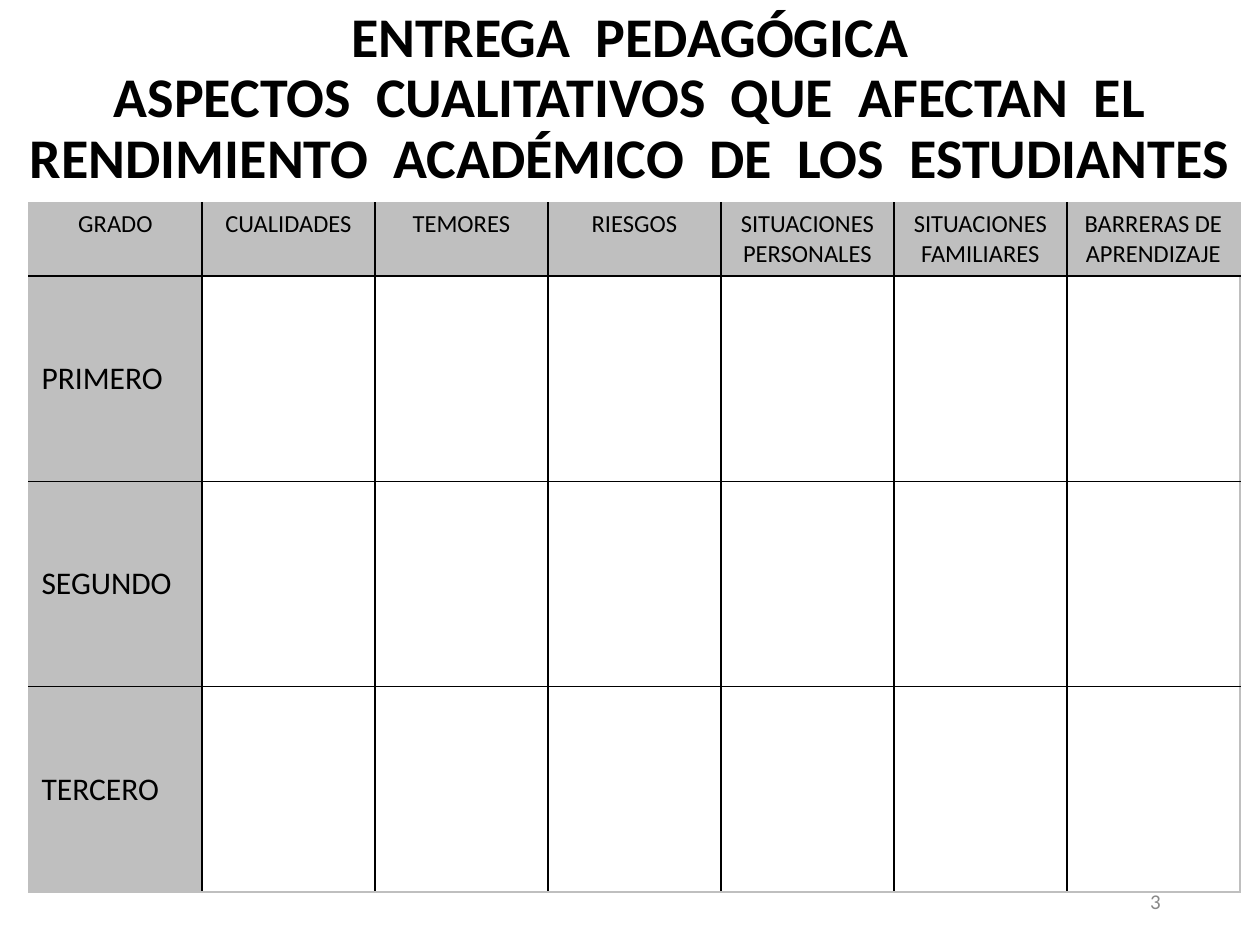
from dataclasses import dataclass

from lxml import etree
from pptx import Presentation
from pptx.dml.color import RGBColor
from pptx.enum import text as t
from pptx.oxml import ns
from pptx.util import Inches, Pt

BLACK = RGBColor(0x00, 0x00, 0x00)
WHITE = RGBColor(0xFF, 0xFF, 0xFF)
HEADING_GRAY = RGBColor(0xBF, 0xBF, 0xBF)
NUMBER_GRAY = RGBColor(0x89, 0x89, 0x89)
FONT = "Calibri"

HEADINGS = ["GRADO", "CUALIDADES", "TEMORES", "RIESGOS", "SITUACIONES PERSONALES",
            "SITUACIONES FAMILIARES", "BARRERAS DE APRENDIZAJE"]
GRADES = ["PRIMERO", "SEGUNDO", "TERCERO"]
TABLE_WIDTH = 9.61
HEADING_HEIGHT, GRADE_HEIGHT = 0.58, 1.63


@dataclass
class TextStyle:
    size: int
    color: RGBColor = BLACK
    bold: bool = False
    align: t.PP_ALIGN = t.PP_ALIGN.LEFT
    anchor: t.MSO_ANCHOR = t.MSO_ANCHOR.TOP


@dataclass
class Label:
    text: str
    left: float
    top: float
    width: float
    height: float
    style: TextStyle
    line_spacing: float = 1.0


TITLE_STYLE = TextStyle(32, bold=True, align=t.PP_ALIGN.CENTER, anchor=t.MSO_ANCHOR.BOTTOM)
NUMBER_STYLE = TextStyle(12, NUMBER_GRAY, align=t.PP_ALIGN.RIGHT, anchor=t.MSO_ANCHOR.MIDDLE)
HEADING_STYLE = TextStyle(14, align=t.PP_ALIGN.CENTER)
GRADE_STYLE = TextStyle(18, anchor=t.MSO_ANCHOR.MIDDLE)

LABELS = [
    Label("ENTREGA  PEDAGÓGICA\vASPECTOS  CUALITATIVOS  QUE  AFECTAN  EL "
          "RENDIMIENTO  ACADÉMICO  DE  LOS  ESTUDIANTES",
          0, 0, 10, 1.56, TITLE_STYLE, 0.9),
    Label("3", 7.06, 6.95, 2.25, 0.4, NUMBER_STYLE),
]


def style_paragraph(paragraph, style: TextStyle) -> None:
    paragraph.alignment = style.align
    font = paragraph.font
    font.name, font.size, font.bold = FONT, Pt(style.size), style.bold
    font.color.rgb = style.color


def add_label(slide, label: Label) -> None:
    box = slide.shapes.add_textbox(Inches(label.left), Inches(label.top),
                                   Inches(label.width), Inches(label.height))
    frame = box.text_frame
    frame.word_wrap = True
    frame.vertical_anchor = label.style.anchor
    paragraph = frame.paragraphs[0]
    paragraph.text = label.text
    paragraph.line_spacing = label.line_spacing
    style_paragraph(paragraph, label.style)


def set_borders(cell, colors: dict[str, RGBColor]) -> None:
    """Add the border lines ahead of the fill, as the schema requires."""
    properties = cell._tc.get_or_add_tcPr()
    for position, (side, color) in enumerate(colors.items()):
        line = etree.Element(ns.qn(f"a:{side}"), w=str(Pt(1)))
        fill = etree.SubElement(line, ns.qn("a:solidFill"))
        etree.SubElement(fill, ns.qn("a:srgbClr"), val=str(color))
        properties.insert(position, line)


def add_grade_table(slide) -> None:
    row_count, column_count = len(GRADES) + 1, len(HEADINGS)
    heights = [HEADING_HEIGHT] + [GRADE_HEIGHT] * len(GRADES)
    table = slide.shapes.add_table(row_count, column_count, Inches(0.23), Inches(1.61),
                                   Inches(TABLE_WIDTH), Inches(sum(heights))).table
    for column in table.columns:
        column.width = Inches(TABLE_WIDTH / column_count)
    for row, height in zip(table.rows, heights):
        row.height = Inches(height)

    # Gray headings and grades, white body, black inner lines and gray outer ones
    for r in range(row_count):
        for c in range(column_count):
            cell = table.cell(r, c)
            style = GRADE_STYLE if r else HEADING_STYLE
            if r == 0:
                cell.text = HEADINGS[c]
            elif c == 0:
                cell.text = GRADES[r - 1]
            style_paragraph(cell.text_frame.paragraphs[0], style)
            cell.vertical_anchor = style.anchor
            cell.fill.solid()
            cell.fill.fore_color.rgb = HEADING_GRAY if r == 0 or c == 0 else WHITE
            outer = {"lnL": c == 0, "lnR": c == column_count - 1,
                     "lnT": r == 0, "lnB": r == row_count - 1}
            set_borders(cell, {side: HEADING_GRAY if is_outer else BLACK
                               for side, is_outer in outer.items()})


def main() -> None:
    presentation = Presentation()
    presentation.slide_width, presentation.slide_height = Inches(10), Inches(7.5)
    slide = presentation.slides.add_slide(presentation.slide_layouts[6])

    # Title and page number
    for label in LABELS:
        add_label(slide, label)

    # Qualitative aspects by grade
    add_grade_table(slide)
    presentation.save("out.pptx")


if __name__ == "__main__":
    main()
